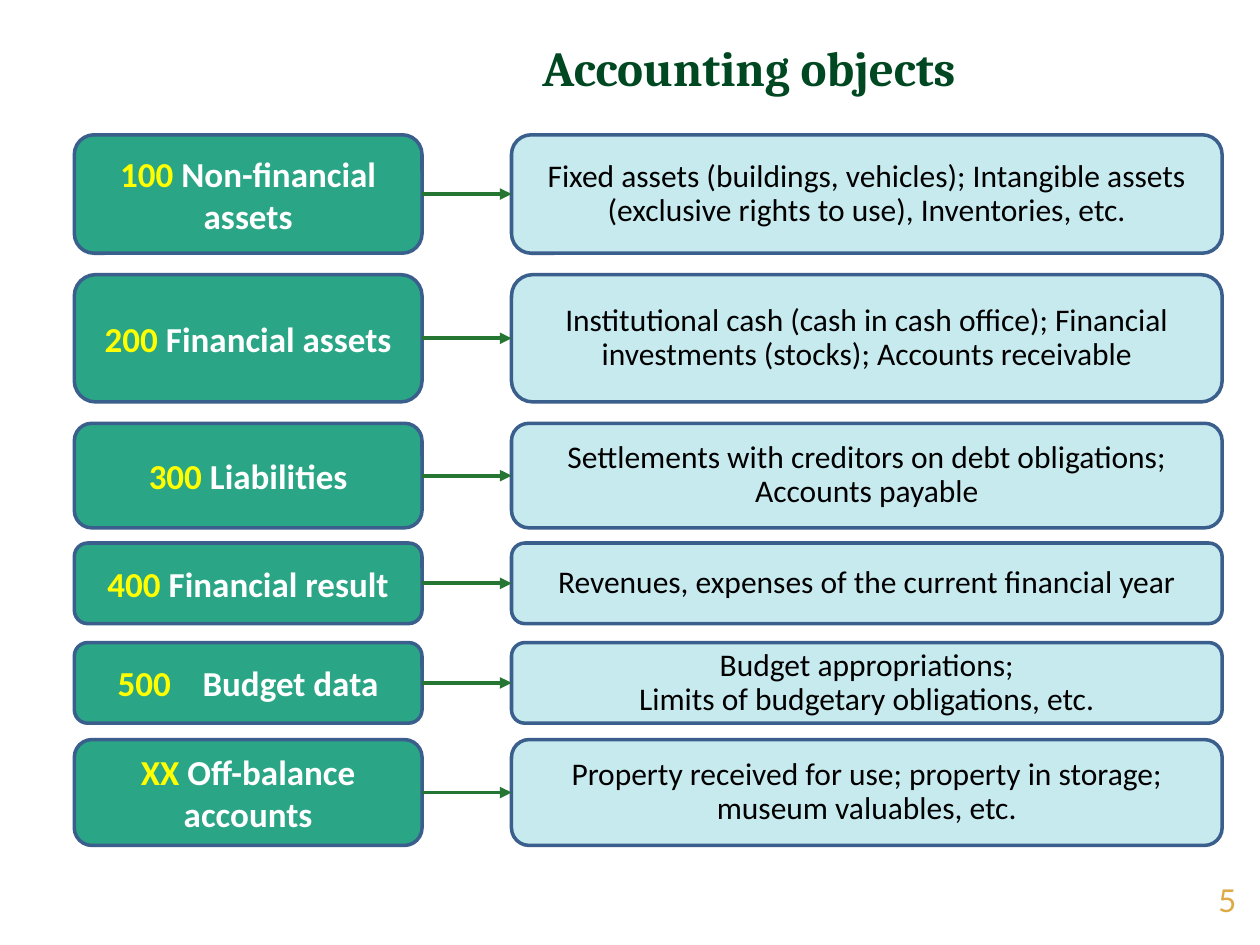
from lxml import etree
from pptx import Presentation
from pptx.dml.color import RGBColor
from pptx.enum.shapes import MSO_CONNECTOR, MSO_SHAPE
from pptx.enum.text import MSO_ANCHOR, PP_ALIGN
from pptx.oxml.ns import qn
from pptx.util import Inches, Pt

ROUND = MSO_SHAPE.ROUNDED_RECTANGLE
STRAIGHT = MSO_CONNECTOR.STRAIGHT
MIDDLE, TOP = MSO_ANCHOR.MIDDLE, MSO_ANCHOR.TOP
CENTER, RIGHT = PP_ALIGN.CENTER, PP_ALIGN.RIGHT

COLORS = {
    "title": "004821", "green": "2AA686", "pale": "C7EAEF", "edge": "3A5F8C",
    "arrow": "247632", "code": "FFFF00", "white": "FFFFFF", "black": "000000",
    "number": "DEAA46",
}


def color(name):
    return RGBColor.from_string(COLORS[name])


def write(shape, lines, size=18, font="Calibri", bold=False, align=CENTER,
          anchor=MIDDLE, spacing=1.0):
    """Fill a shape with lines, each a list of (text, color, letter spacing)."""
    frame = shape.text_frame
    frame.word_wrap = True
    frame.vertical_anchor = anchor
    for i, line in enumerate(lines):
        para = frame.add_paragraph() if i else frame.paragraphs[0]
        para.alignment = align
        para.line_spacing = spacing
        for text, shade, track in line:
            run = para.add_run()
            run.text = text
            run.font.size = Pt(size)
            run.font.name = font
            run.font.bold = bold
            run.font.color.rgb = color(shade)
            if track:
                run.font._element.set("spc", str(int(track * 100)))


# top, height, code, points between code and name, name, details
ROWS = [
    (1.07, 0.94, "100", 0, "Non-financial assets",
     ["Fixed assets (buildings, vehicles); Intangible assets "
      "(exclusive rights to use), Inventories, etc."]),
    (2.18, 1.01, "200", 0, "Financial assets",
     ["Institutional cash (cash in cash office); Financial "
      "investments (stocks); Accounts receivable"]),
    (3.36, 0.83, "300", 0, "Liabilities",
     ["Settlements with creditors on debt obligations; Accounts payable"]),
    (4.31, 0.64, "400", 0, "Financial result",
     ["Revenues, expenses of the current financial year"]),
    (5.10, 0.64, "500", 13.5, "Budget data",
     ["Budget appropriations;", "Limits of budgetary obligations, etc."]),
    (5.87, 0.84, "XX", 0, "Off-balance accounts",
     ["Property received for use; property in storage; "
      "museum valuables, etc."]),
]
LEFT, WIDTH = 0.59, 2.76
DETAIL, SPAN = 4.06, 5.64

prs = Presentation()
prs.slide_width, prs.slide_height = Inches(10), Inches(7.5)
slide = prs.slides.add_slide(prs.slide_layouts[5])
shapes = slide.shapes

title = shapes.title
title.left, title.top = Inches(2.4), Inches(0.16)
title.width, title.height = Inches(7.09), Inches(0.75)
write(title, [[("Accounting objects", "title", 0)]], size=28, font="Cambria",
      bold=True)

for top, height, code, gap, name, details in ROWS:
    boxes = []
    for left, width, fill in ((LEFT, WIDTH, "green"), (DETAIL, SPAN, "pale")):
        box = shapes.add_shape(ROUND, Inches(left), Inches(top),
                               Inches(width), Inches(height))
        box.shadow.inherit = False
        box.fill.solid()
        box.fill.fore_color.rgb = color(fill)
        box.line.color.rgb = color("edge")
        box.line.width = Pt(2)
        boxes.append(box)
    label, detail = boxes
    write(label, [[(code, "code", 0), (" ", "white", gap), (name, "white", 0)]],
          size=20, bold=True)
    write(detail, [[(text, "black", 0)] for text in details], spacing=0.9)

    mid = Inches(top + height / 2)
    arrow = shapes.add_connector(STRAIGHT, Inches(LEFT + WIDTH), mid,
                                 Inches(DETAIL), mid)
    arrow.line.color.rgb = color("arrow")
    arrow.line.width = Pt(2.25)
    etree.SubElement(arrow.line._get_or_add_ln(), qn("a:tailEnd"),
                     type="triangle")
    etree.SubElement(arrow._element.spPr, qn("a:effectLst"))

number = shapes.add_textbox(Inches(9.47), Inches(6.94), Inches(0.44), Inches(0.4))
write(number, [[("5", "number", 0)]], font="Lato", align=RIGHT, anchor=TOP)

prs.save("out.pptx")
